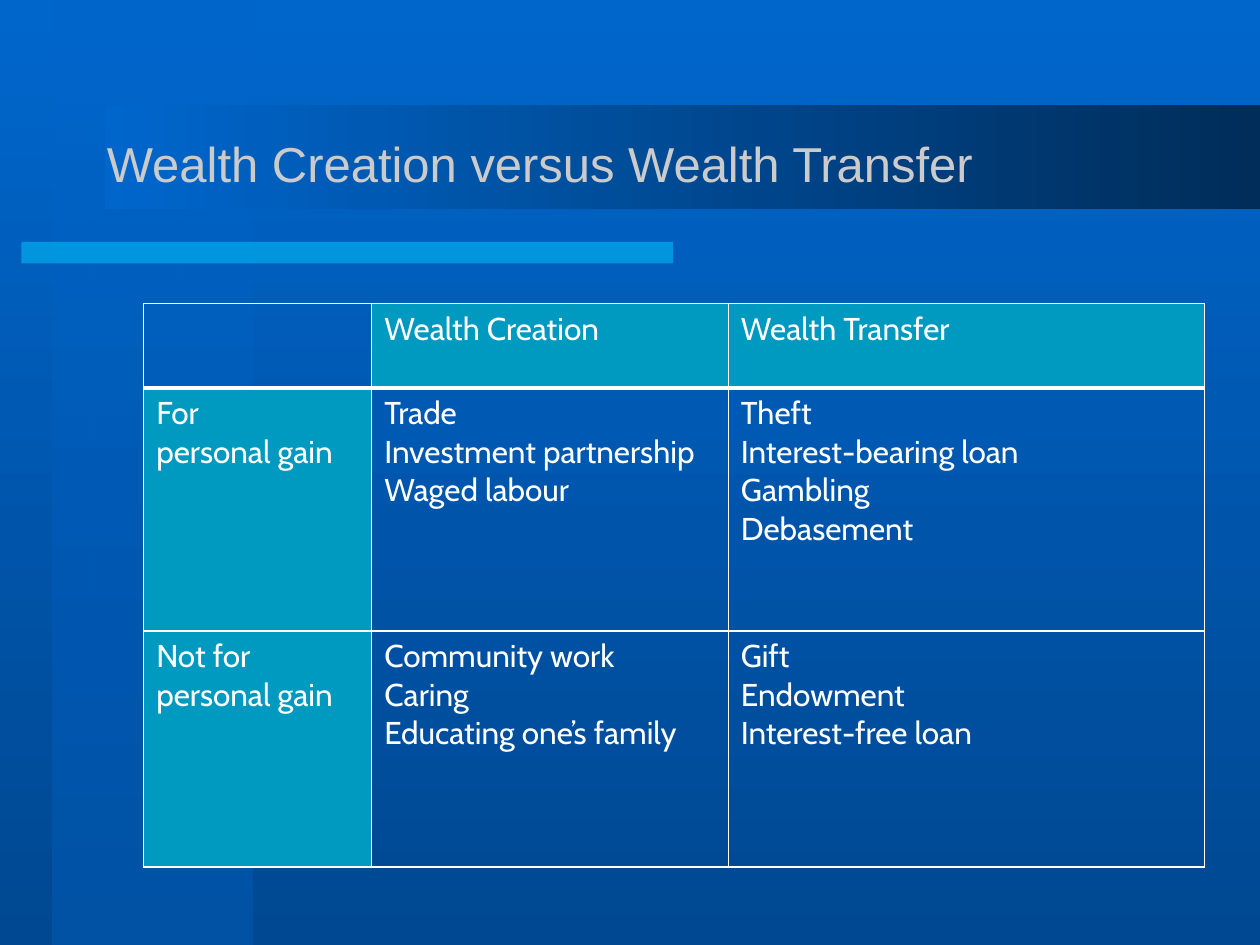
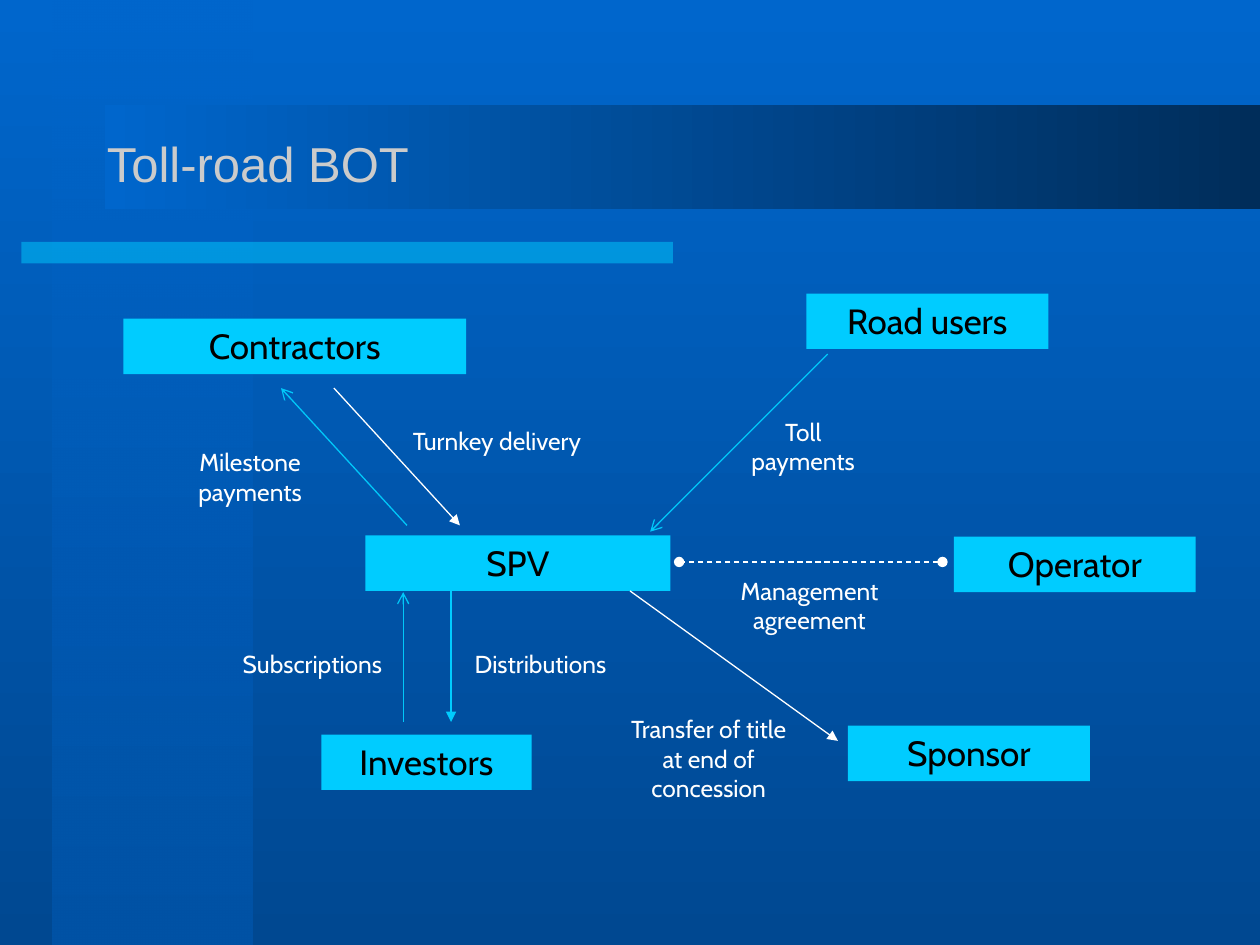
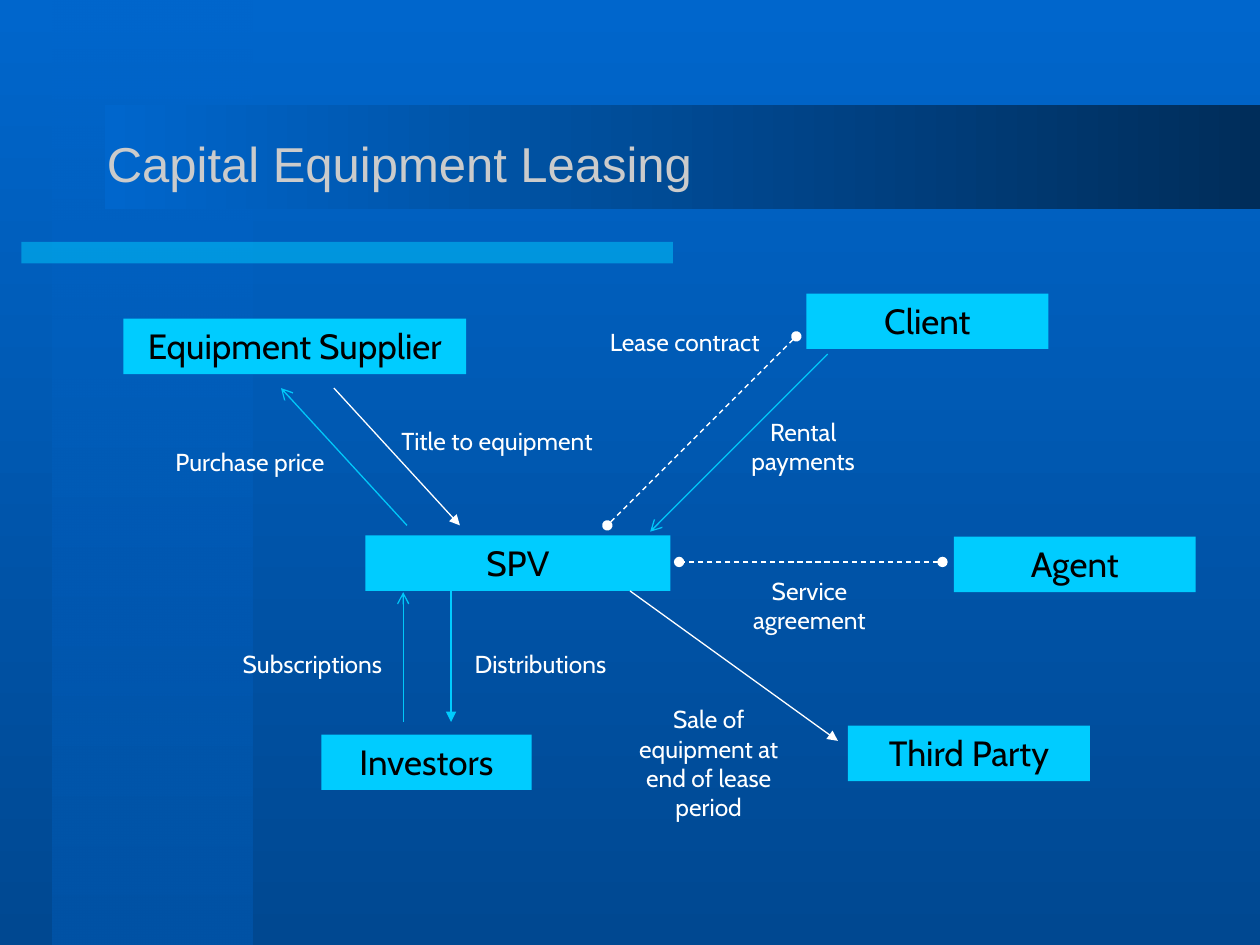
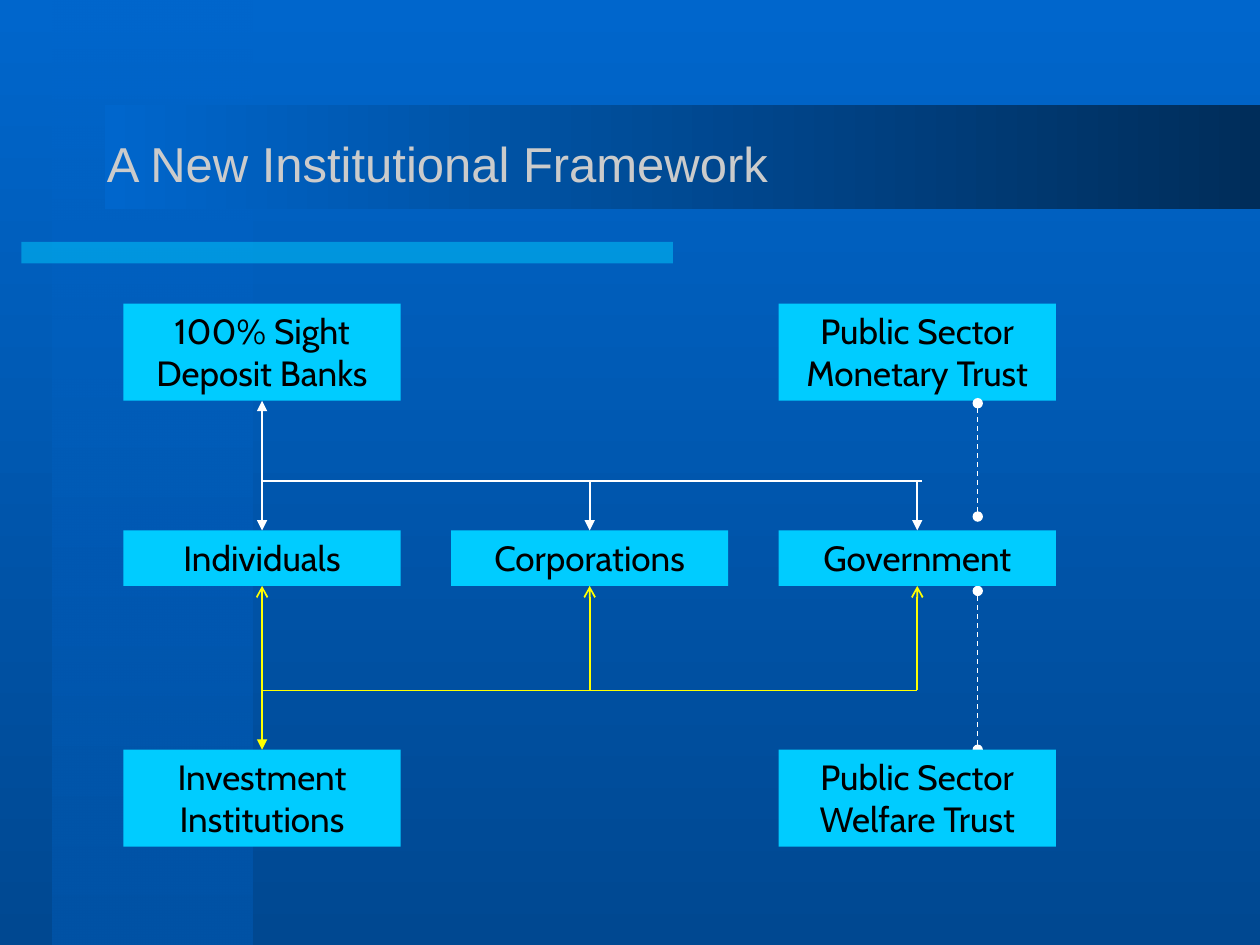
import dataclasses
import typing

import lxml.etree
import pptx
import pptx.dml.color
import pptx.enum.dml
import pptx.enum.shapes
import pptx.enum.text
import pptx.oxml.ns
import pptx.util

# Shared look
BLUE = "0066CC"
CYAN = "00CCFF"
SKY = "00C8F9"
TEAL = "0099BF"
WHITE = "FFFFFF"
BLACK = "000000"
GREY = "CBCBCB"
YELLOW = "FFFF00"
HEAD_FONT, BODY_FONT = "Arial", "Cabin"

Inches = pptx.util.Inches
qn = pptx.oxml.ns.qn
ALIGN = pptx.enum.text.PP_ALIGN
ANCHOR = pptx.enum.text.MSO_ANCHOR


@dataclasses.dataclass
class Box:
    """A filled node."""
    text: str
    left: float
    top: float
    width: float
    height: float = 0.44


@dataclasses.dataclass
class Label:
    """Centred small text beside a line."""
    text: str
    left: float
    top: float
    width: float
    lines: int = 1


@dataclasses.dataclass
class Link:
    """A straight line with optional ends and dashes."""
    start: tuple[float, float]
    end: tuple[float, float]
    color: str = WHITE
    head: str = ""
    tail: str = ""
    dashed: bool = False
    weight: float = 0.75


class Tint(typing.NamedTuple):
    """Shade and alpha of a gradient stop, in thousandths of a percent."""
    shade: int = 0
    alpha: int = 0


def paint(color: str) -> pptx.dml.color.RGBColor:
    return pptx.dml.color.RGBColor.from_string(color)


def add_node(parent, tag: str, **values):
    node = lxml.etree.SubElement(parent, qn(tag))
    for key, value in values.items():
        node.set(key, str(value))
    return node


def apply_tint(node, tint: Tint) -> None:
    if tint.shade:
        add_node(node, "a:shade", val=tint.shade)
    if tint.alpha:
        add_node(node, "a:alpha", val=tint.alpha)


def fill_blend(fill, root, angle: int, tints: tuple[Tint, Tint]) -> None:
    """Blend from one tint of the base blue to another."""
    fill.gradient()
    fill.gradient_angle = angle
    for place, stop in enumerate(fill.gradient_stops):
        stop.position = place
        stop.color.rgb = paint(BLUE)
    for node, tint in zip(root.iter(qn("a:srgbClr")), tints):
        apply_tint(node, tint)


def set_font(para, name: str, size: float, color: str) -> None:
    para.font.name = name
    para.font.size = pptx.util.Pt(size)
    para.font.color.rgb = paint(color)


def add_rect(slide, left: float, top: float, width: float, height: float):
    rect = slide.shapes.add_shape(
        pptx.enum.shapes.MSO_SHAPE.RECTANGLE,
        Inches(left), Inches(top), Inches(width), Inches(height))
    rect.shadow.inherit = False
    rect.line.fill.background()
    return rect


def write(shape, text: str, name: str, size: float, color: str,
          align=ALIGN.CENTER, anchor=ANCHOR.TOP) -> None:
    frame = shape.text_frame
    frame.word_wrap = True
    frame.vertical_anchor = anchor
    frame.text = text
    para = frame.paragraphs[0]
    para.alignment = align
    set_font(para, name, size, color)


def add_box(slide, box: Box):
    rect = add_rect(slide, box.left, box.top, box.width, box.height)
    rect.fill.solid()
    rect.fill.fore_color.rgb = paint(CYAN)
    write(rect, box.text, BODY_FONT, 20, BLACK)
    return rect


def add_label(slide, label: Label) -> None:
    height = 0.34 + 0.23 * (label.lines - 1)
    area = slide.shapes.add_textbox(
        Inches(label.left), Inches(label.top),
        Inches(label.width), Inches(height))
    write(area, label.text, BODY_FONT, 14, WHITE)


def add_link(slide, link: Link):
    line = slide.shapes.add_connector(
        pptx.enum.shapes.MSO_CONNECTOR.STRAIGHT,
        *map(Inches, link.start + link.end))
    line.line.color.rgb = paint(link.color)
    line.line.width = pptx.util.Pt(link.weight)
    if link.dashed:
        line.line.dash_style = pptx.enum.dml.MSO_LINE.DASH
    props = line._element.spPr
    for tag, kind in (("a:headEnd", link.head), ("a:tailEnd", link.tail)):
        if kind:
            add_node(props.find(qn("a:ln")), tag, type=kind)
    add_node(props, "a:effectLst")
    return line


def add_slide(deck, title: str):
    """Blank slide with the shared ground, bands and title."""
    slide = deck.slides.add_slide(deck.slide_layouts[6])
    fill_blend(slide.background.fill, slide._element, 270,
               (Tint(), Tint(shade=46275)))

    stripe = add_rect(slide, 0.42, 0, 1.58, 7.5)
    fill_blend(stripe.fill, stripe._element, 270,
               (Tint(alpha=50000), Tint(shade=62353)))

    rule = add_rect(slide, 0.17, 1.92, 5.17, 0.17)
    rule.fill.solid()
    rule.fill.fore_color.rgb = paint(CYAN)
    apply_tint(next(rule._element.iter(qn("a:srgbClr"))), Tint(alpha=50000))

    band = add_rect(slide, 0.83, 0.83, 9.17, 0.83)
    fill_blend(band.fill, band._element, 0, (Tint(), Tint(shade=15294)))

    head = slide.shapes.add_textbox(
        Inches(0.75), Inches(0.67), Inches(9.08), Inches(1.25))
    write(head, title, HEAD_FONT, 28, GREY, ALIGN.LEFT, ANCHOR.MIDDLE)
    return slide


# Wealth table
WEALTH_COLS = (1.81, 2.83, 3.78)
WEALTH_ROWS = (0.67, 1.93, 1.87)
WEALTH = (
    ("", "Wealth Creation", "Wealth Transfer"),
    ("For\npersonal gain",
     "Trade\nInvestment partnership\nWaged labour",
     "Theft\nInterest-bearing loan\nGambling\nDebasement"),
    ("Not for personal gain",
     "Community work\nCaring\nEducating one’s family",
     "Gift\nEndowment\nInterest-free loan"),
)


def set_edges(cell, row: int) -> None:
    """White edges, with a thick rule below the first row."""
    props = cell._tc.get_or_add_tcPr()
    thick = {"a:lnB": 0, "a:lnT": 1}
    for tag in ("a:lnL", "a:lnR", "a:lnT", "a:lnB"):
        weight = 3 if thick.get(tag) == row else 1
        edge = add_node(props, tag, w=pptx.util.Pt(weight))
        add_node(add_node(edge, "a:solidFill"), "a:srgbClr", val=WHITE)


def build_wealth(deck) -> None:
    slide = add_slide(deck, "Wealth Creation versus Wealth Transfer")
    table = slide.shapes.add_table(
        len(WEALTH_ROWS), len(WEALTH_COLS), Inches(1.14), Inches(2.41),
        Inches(sum(WEALTH_COLS)), Inches(sum(WEALTH_ROWS))).table
    table.first_row = table.horz_banding = False
    for col, width in zip(table.columns, WEALTH_COLS):
        col.width = Inches(width)
    for row, height in zip(table.rows, WEALTH_ROWS):
        row.height = Inches(height)
    for i, texts in enumerate(WEALTH):
        for j, text in enumerate(texts):
            cell = table.cell(i, j)
            set_edges(cell, i)
            if (i == 0) != (j == 0):
                cell.fill.solid()
                cell.fill.fore_color.rgb = paint(TEAL)
            else:
                cell.fill.background()
            cell.text = text
            for para in cell.text_frame.paragraphs:
                set_font(para, BODY_FONT, 18, WHITE)


# Parts that both deals around an SPV share
DEAL_BOXES = (
    Box("SPV", 2.9, 4.25, 2.42),
    Box("Investors", 2.55, 5.83, 1.67),
)
DEAL_LABELS = (
    Label("Subscriptions", 1.69, 5.1, 1.58),
    Label("Distributions", 3.58, 5.1, 1.42),
)
DEAL_LINKS = (
    Link((3.2, 4.7), (3.2, 5.73), SKY, head="arrow"),
    Link((3.58, 4.69), (3.58, 5.73), CYAN, tail="triangle"),
    Link((3.23, 4.17), (2.23, 3.08), SKY, tail="arrow"),
    Link((3.65, 4.17), (2.65, 3.08), head="triangle"),
    Link((5.16, 4.22), (6.57, 2.81), SKY, head="arrow"),
    Link((6.65, 5.88), (5, 4.69), head="triangle"),
    Link((7.48, 4.46), (5.39, 4.46), head="oval", tail="oval", dashed=True),
)


def build_deal(deck, title: str, maker: str, user: str, helper: str,
               taker: str, labels: tuple[Label, ...],
               links: tuple[Link, ...] = ()) -> None:
    slide = add_slide(deck, title)
    boxes = DEAL_BOXES + (
        Box(maker, 0.98, 2.53, 2.72),
        Box(user, 6.4, 2.33, 1.92),
        Box(helper, 7.57, 4.26, 1.92),
        Box(taker, 6.73, 5.76, 1.92),
    )
    for box in boxes:
        add_box(slide, box)
    for link in DEAL_LINKS + links:
        add_link(slide, link)
    for label in DEAL_LABELS + labels:
        add_label(slide, label)


def build_road(deck) -> None:
    build_deal(
        deck, "Toll-road BOT",
        "Contractors", "Road users", "Operator", "Sponsor",
        (Label("Turnkey delivery", 3.07, 3.33, 1.75),
         Label("Milestone payments", 1.15, 3.5, 1.67, 2),
         Label("Toll payments", 5.71, 3.26, 1.33, 2),
         Label("Management agreement", 5.64, 4.52, 1.57, 2),
         Label("Transfer of title at end of concession",
               4.84, 5.62, 1.57, 3)))


def build_lease(deck) -> None:
    build_deal(
        deck, "Capital Equipment Leasing",
        "Equipment Supplier", "Client", "Agent", "Third Party",
        (Label("Title to equipment", 3.07, 3.33, 1.75),
         Label("Purchase price", 1.15, 3.5, 1.67),
         Label("Lease contract", 4.53, 2.55, 1.81),
         Label("Rental payments", 5.71, 3.26, 1.33, 2),
         Label("Service agreement", 5.64, 4.52, 1.57, 2),
         Label("Sale of equipment at end of lease period",
               4.84, 5.54, 1.57, 4)),
        (Link((6.32, 2.67), (4.82, 4.17),
              head="oval", tail="oval", dashed=True),))


# Framework grid
LEFTS = tuple(0.98 + 2.6 * i for i in range(3))
BOX_WIDTH = 2.2
MIDS = tuple(left + BOX_WIDTH / 2 for left in LEFTS)
TOP_ROW, MID_ROW, LOW_ROW = 2.41, 4.21, 5.95
UPPER, LOWER = 3.82, 5.48
TRUST_X = 7.76
TOP_SIDE, LOW_SIDE = 0, 2


def build_frame(deck) -> None:
    slide = add_slide(deck, "A New Institutional Framework")

    def place(text: str, col: int, top: float, height: float = 0.77):
        return add_box(slide, Box(text, LEFTS[col], top, BOX_WIDTH, height))

    def tie(top: float, low: float) -> None:
        add_link(slide, Link((TRUST_X, low), (TRUST_X, top),
                             head="oval", tail="oval", dashed=True))

    def join(box, side: int, mid: float, bus: float, color: str,
             kind: str, weight: float = 1) -> None:
        """Run from a bus line to the middle of a box side."""
        line = add_link(slide, Link((mid, bus), (mid, bus), color,
                                    tail=kind, weight=weight))
        line.end_connect(box, side)

    # The welfare trust covers the lower end of its tie
    tie(4.69, LOW_ROW)
    banks = place("100% Sight Deposit Banks", 0, TOP_ROW)
    place("Public Sector Monetary Trust", 2, TOP_ROW)
    funds = place("Investment Institutions", 0, LOW_ROW)
    place("Public Sector Welfare Trust", 2, LOW_ROW)
    tie(3.2, 4.1)

    # Bus lines, with a branch to each sector
    add_link(slide, Link((MIDS[0], UPPER), (7.32, UPPER), weight=1))
    add_link(slide, Link((MIDS[0], LOWER), (MIDS[2], LOWER), YELLOW, weight=1))
    join(banks, LOW_SIDE, MIDS[0], UPPER, WHITE, "triangle", 0.75)
    join(funds, TOP_SIDE, MIDS[0], LOWER, YELLOW, "triangle")
    for col, text in enumerate(("Individuals", "Corporations", "Government")):
        sector = place(text, col, MID_ROW, 0.44)
        join(sector, TOP_SIDE, MIDS[col], UPPER, WHITE, "triangle")
        join(sector, LOW_SIDE, MIDS[col], LOWER, YELLOW, "arrow")


def main() -> None:
    deck = pptx.Presentation()
    deck.slide_width, deck.slide_height = Inches(10), Inches(7.5)
    build_wealth(deck)
    build_road(deck)
    build_lease(deck)
    build_frame(deck)
    deck.save("out.pptx")


if __name__ == "__main__":
    main()
